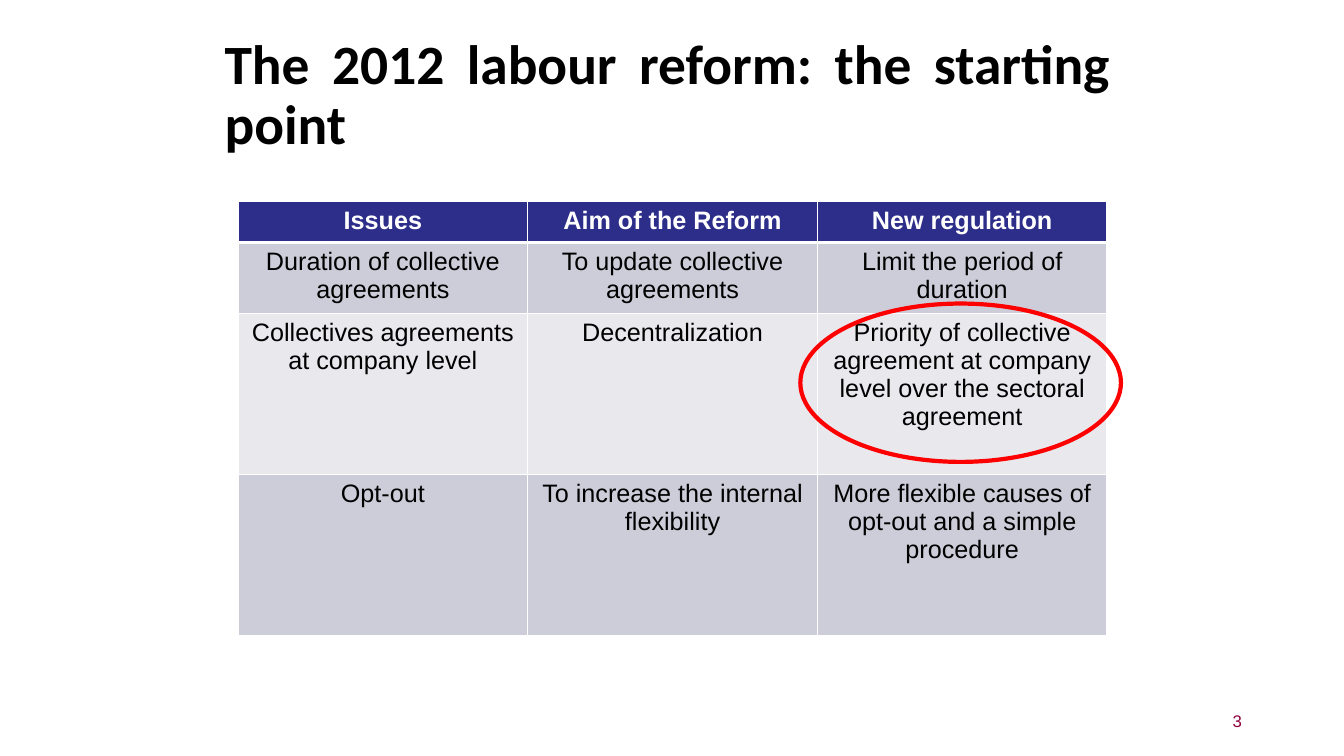
import lxml.etree
import pptx
import pptx.dml.color
import pptx.enum.shapes
import pptx.enum.text
import pptx.oxml.ns
import pptx.util
from pptx.util import Cm

RGBColor = pptx.dml.color.RGBColor
Align = pptx.enum.text.PP_ALIGN
Anchor = pptx.enum.text.MSO_ANCHOR

BLACK = RGBColor(0x00, 0x00, 0x00)
WHITE = RGBColor(0xFF, 0xFF, 0xFF)
NAVY = RGBColor(0x2D, 0x2D, 0x8A)
BAND_DARK = RGBColor(0xCD, 0xCD, 0xDA)
BAND_LIGHT = RGBColor(0xE8, 0xE8, 0xED)
RED = RGBColor(0xFF, 0x00, 0x00)
MAROON = RGBColor(0x90, 0x00, 0x3E)

REFORM_ROWS = [
    ("Issues", "Aim of the Reform", "New regulation"),
    ("Duration of collective agreements", "To update collective agreements",
     "Limit the period of duration"),
    ("Collectives agreements at company level", "Decentralization",
     "Priority of collective agreement at company level over the sectoral agreement"),
    ("Opt-out", "To increase the internal flexibility",
     "More flexible causes of opt-out and a simple procedure"),
]
ROW_HEIGHTS = [Cm(1.03), Cm(1.78), Cm(4.06), Cm(4.06)]


def style_paragraph(para, text, size, color, align, name="Arial", bold=False):
    para.text = text
    para.alignment = align
    para.font.size = pptx.util.Pt(size)
    para.font.name = name
    para.font.bold = bold
    para.font.color.rgb = color


def add_text(page, box, text, size, color, align, **font):
    frame = page.shapes.add_textbox(*box).text_frame
    frame.word_wrap = True
    frame.vertical_anchor = Anchor.MIDDLE
    para = frame.paragraphs[0]
    style_paragraph(para, text, size, color, align, **font)
    return para


def add_title(page, box):
    para = add_text(page, box, "The 2012 labour reform: the starting point",
                    39.6, BLACK, Align.JUSTIFY, name="Calibri", bold=True)
    para.line_spacing = 0.9


def add_cell_borders(cell, widths):
    properties = cell._tc.get_or_add_tcPr()
    for side, width in zip("LRTB", widths):
        line = lxml.etree.SubElement(properties, pptx.oxml.ns.qn(f"a:ln{side}"),
                                     w=str(pptx.util.Pt(width)))
        fill = lxml.etree.SubElement(line, pptx.oxml.ns.qn("a:solidFill"))
        lxml.etree.SubElement(fill, pptx.oxml.ns.qn("a:srgbClr"), val=str(WHITE))


def add_reform_table(page, box):
    table = page.shapes.add_table(len(REFORM_ROWS), len(REFORM_ROWS[0]), *box).table
    for row_index, texts in enumerate(REFORM_ROWS):
        table.rows[row_index].height = ROW_HEIGHTS[row_index]
        header = row_index == 0
        band = NAVY if header else BAND_DARK if row_index % 2 else BAND_LIGHT
        widths = (1, 1, 3 if row_index == 1 else 1, 3 if header else 1)
        for column_index, text in enumerate(texts):
            cell = table.cell(row_index, column_index)
            add_cell_borders(cell, widths)
            cell.fill.solid()
            cell.fill.fore_color.rgb = band
            style_paragraph(cell.text_frame.paragraphs[0], text, 18,
                            WHITE if header else BLACK, Align.CENTER, bold=header)


def add_highlight(page, box):
    ellipse = page.shapes.add_shape(pptx.enum.shapes.MSO_SHAPE.OVAL, *box)
    ellipse.shadow.inherit = False
    ellipse.fill.background()
    ellipse.line.color.rgb = RED
    ellipse.line.width = pptx.util.Pt(3)


def main():
    deck = pptx.Presentation()
    deck.slide_width, deck.slide_height = Cm(33.87), Cm(19.05)
    page = deck.slides.add_slide(deck.slide_layouts[6])
    add_title(page, (Cm(5.41), Cm(1.32), Cm(22.83), Cm(2.21)))
    add_reform_table(page, (Cm(6), Cm(5.08), Cm(21.9), sum(ROW_HEIGHTS)))
    add_text(page, (Cm(23.93), Cm(17.65), Cm(7.62), Cm(1.02)),
             "3", 12, MAROON, Align.RIGHT)
    add_highlight(page, (Cm(20.17), Cm(7.65), Cm(8.08), Cm(3.99)))
    deck.save("out.pptx")


if __name__ == "__main__":
    main()
